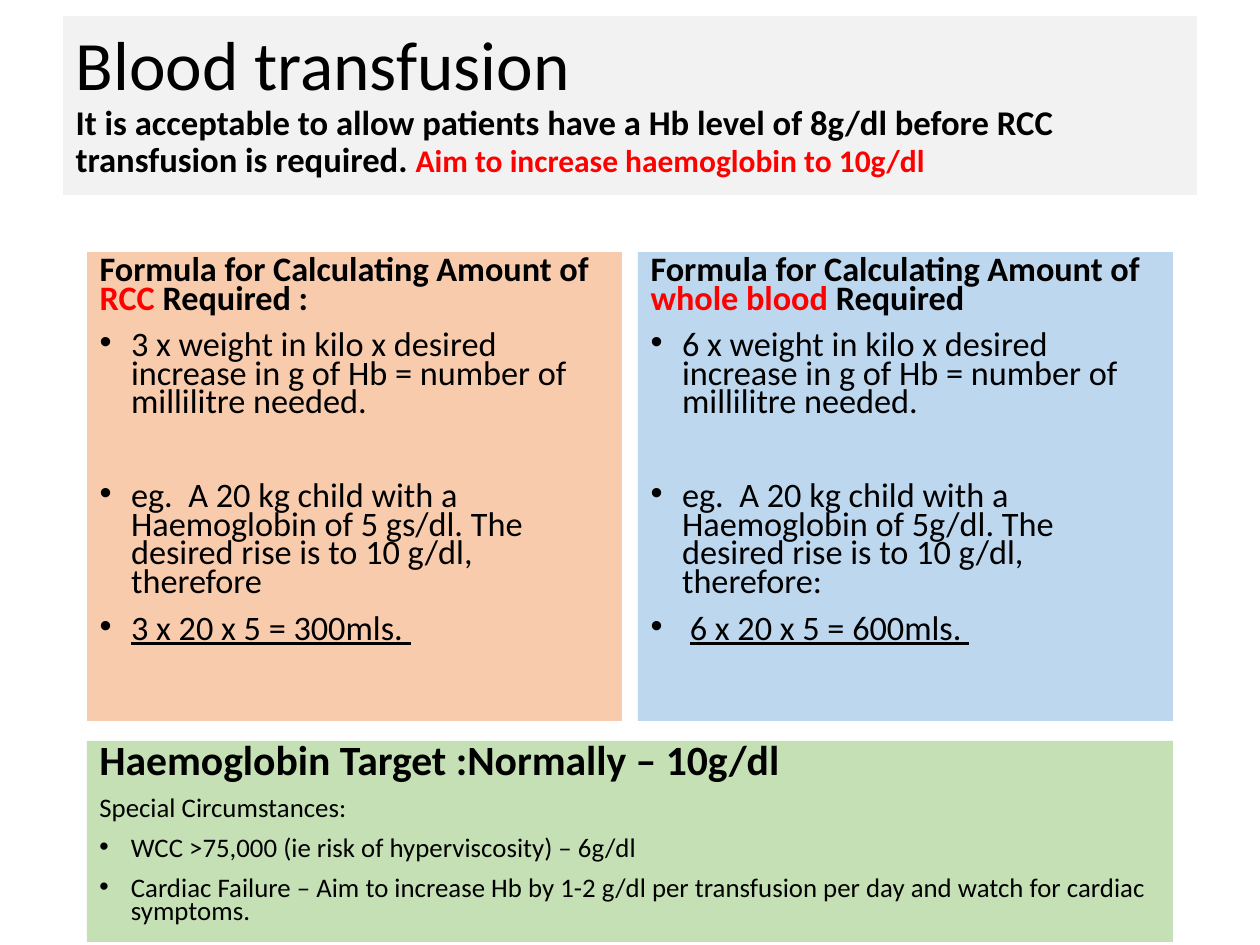
"""Build the blood transfusion slide with two formula panels and a target panel."""
from lxml.etree import SubElement
from pptx import Presentation
from pptx.dml.color import RGBColor
from pptx.enum.shapes import MSO_SHAPE
from pptx.enum.text import MSO_ANCHOR, MSO_AUTO_SIZE, PP_ALIGN
from pptx.oxml.ns import qn
from pptx.util import Inches, Pt

COLORS = {"text": "000000", "accent": "FF0000", "title": "F2F2F2",
          "rcc": "F8CBAD", "whole": "BDD7EE", "target": "C5E0B4"}
SCALE = Inches(1) / 126
SLIDE_SIZE = (1260, 945)
TITLE_BOX = (63, 16, 1134, 179)
PANEL_LEFT, PANEL_TOP, PANEL_WIDTH, PANEL_HEIGHT, PANEL_GAP = 87, 252, 535, 469, 16
TARGET_TOP, TARGET_HEIGHT = 741, 201

TITLE = [
    [("Blood transfusion", 39.6, "")],
    [("It is acceptable to allow patients have a Hb level of 8g/dl before RCC "
      "transfusion is required. ", 19.8, "bold"),
     ("Aim to increase haemoglobin to 10g/dl", 18, "bold accent")],
]
FORMULAS = [
    {"fill": "rcc", "product": "RCC", "ending": " Required :", "factor": 3,
     "level": "5 gs/dl", "therefore": "therefore", "indent": "", "result": "300mls. "},
    {"fill": "whole", "product": "whole blood ", "ending": "Required", "factor": 6,
     "level": "5g/dl", "therefore": "therefore:", "indent": " ", "result": "600mls. "},
]
TARGET = [
    ([("Haemoglobin Target :Normally – 10g/dl", 23.8, "bold")], False, 10),
    ([("Special Circumstances:", 15.3, "")], False, 10),
    ([("WCC >75,000 (ie risk of hyperviscosity) – 6g/dl", 15.3, "")], True, 10),
    ([("Cardiac Failure – Aim to increase Hb by 1-2 g/dl per transfusion per day "
       "and watch for cardiac symptoms.", 15.3, "")], True, 10),
]


def px(value):
    return round(value * SCALE)


def formula_paragraphs(formula):
    size, factor = 19.6, formula["factor"]
    return [
        ([("Formula for Calculating Amount of ", size, "bold"),
          (formula["product"], size, "bold accent"),
          (formula["ending"], size, "bold")], False, 10),
        ([(f"{factor} x weight in kilo x desired increase in g of Hb = "
           "number of millilitre needed.", size, "")], True, 10),
        ([(f"eg.  A 20 kg child with a Haemoglobin of {formula['level']}. "
           f"The desired rise is to 10 g/dl, {formula['therefore']}", size, "")], True, 37),
        ([(formula["indent"], size, ""),
          (f"{factor} x 20 x 5 = {formula['result']}", size, "underline")], True, 10),
    ]


def format_box(shape, box, fill, anchor):
    shape.left, shape.top, shape.width, shape.height = map(px, box)
    shape.fill.solid()
    shape.fill.fore_color.rgb = RGBColor.from_string(COLORS[fill])
    shape.line.fill.background()
    frame = shape.text_frame
    frame.word_wrap = True
    frame.auto_size = MSO_AUTO_SIZE.NONE
    frame.vertical_anchor = anchor


def add_runs(paragraph, runs):
    for text, size, style in runs:
        if not text:
            continue
        run = paragraph.add_run()
        run.text = text
        font = run.font
        font.name, font.size = "Calibri", Pt(size)
        font.bold = "bold" in style
        font.underline = "underline" in style
        font.color.rgb = RGBColor.from_string(COLORS["accent" if "accent" in style else "text"])


def set_bullet(paragraph, bulleted):
    properties = paragraph._p.get_or_add_pPr()
    indent = Inches(0.25) if bulleted else 0
    properties.set("marL", str(indent))
    properties.set("indent", str(-indent))
    if bulleted:
        SubElement(properties, qn("a:buFont")).set("typeface", "Arial")
        SubElement(properties, qn("a:buChar")).set("char", "•")
    else:
        SubElement(properties, qn("a:buNone"))


def fill_panel(shape, paragraphs):
    frame = shape.text_frame
    for index, (runs, bulleted, space) in enumerate(paragraphs):
        paragraph = frame.add_paragraph() if index else frame.paragraphs[0]
        paragraph.alignment = PP_ALIGN.LEFT
        paragraph.line_spacing = 0.7
        paragraph.space_before = Pt(space)
        set_bullet(paragraph, bulleted)
        add_runs(paragraph, runs)


def main():
    presentation = Presentation()
    presentation.slide_width, presentation.slide_height = map(px, SLIDE_SIZE)
    slide = presentation.slides.add_slide(presentation.slide_layouts.get_by_name("Two Content"))
    title, *panels = list(slide.placeholders)[:3]

    format_box(title, TITLE_BOX, "title", MSO_ANCHOR.MIDDLE)
    heading = title.text_frame.paragraphs[0]
    heading.alignment = PP_ALIGN.LEFT
    heading.line_spacing = 0.9
    for index, runs in enumerate(TITLE):
        if index:
            heading.add_line_break()
        add_runs(heading, runs)

    for index, (panel, formula) in enumerate(zip(panels, FORMULAS)):
        left = PANEL_LEFT + index * (PANEL_WIDTH + PANEL_GAP)
        format_box(panel, (left, PANEL_TOP, PANEL_WIDTH, PANEL_HEIGHT),
                   formula["fill"], MSO_ANCHOR.TOP)
        fill_panel(panel, formula_paragraphs(formula))

    target_box = (PANEL_LEFT, TARGET_TOP, 2 * PANEL_WIDTH + PANEL_GAP, TARGET_HEIGHT)
    target = slide.shapes.add_shape(MSO_SHAPE.RECTANGLE, *map(px, target_box))
    target.shadow.inherit = False
    format_box(target, target_box, "target", MSO_ANCHOR.TOP)
    fill_panel(target, TARGET)

    presentation.save("out.pptx")


if __name__ == "__main__":
    main()
